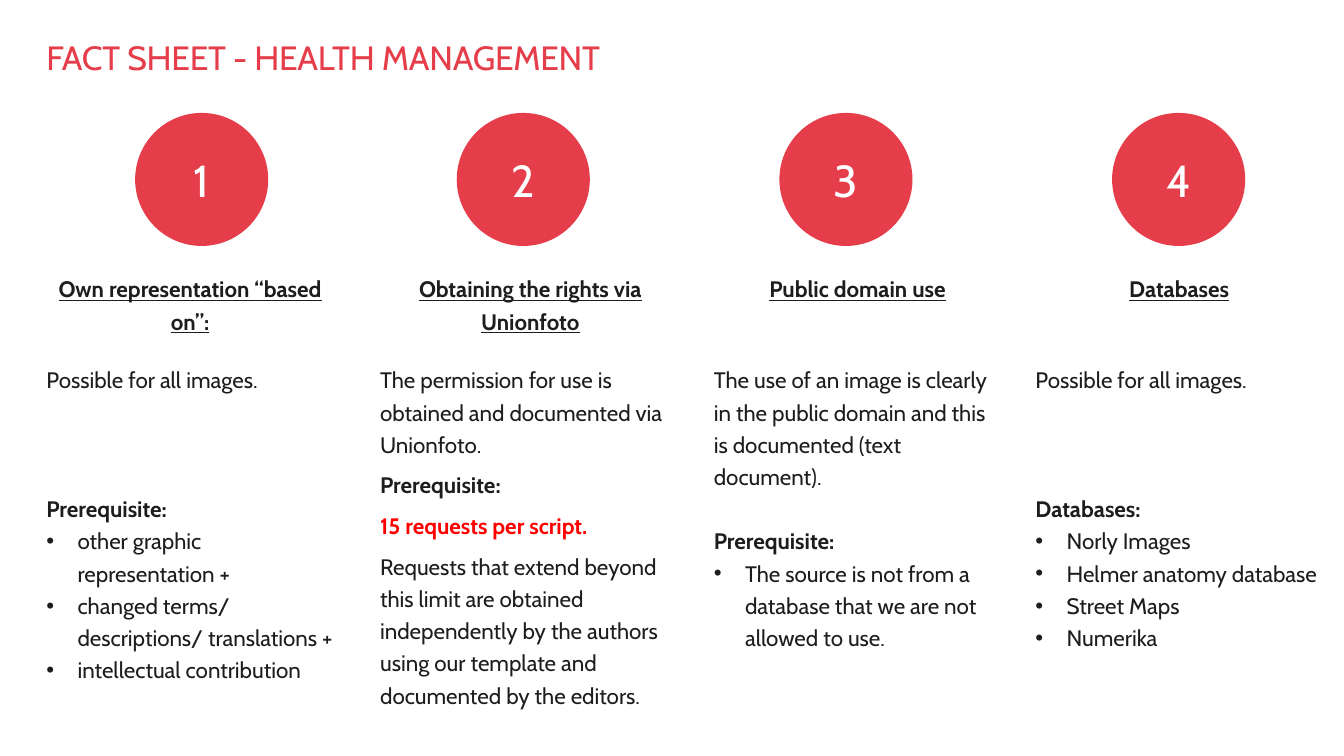
from lxml import etree
from pptx import Presentation
from pptx.dml.color import RGBColor
from pptx.enum.shapes import MSO_SHAPE
from pptx.enum.text import MSO_ANCHOR, PP_ALIGN
from pptx.oxml.ns import qn
from pptx.util import Inches, Pt

CORAL = RGBColor(0xE6, 0x3D, 0x4B)
INK = RGBColor(0x1D, 0x1D, 0x1F)
RED = RGBColor(0xFF, 0x00, 0x00)
WHITE = RGBColor(0xFF, 0xFF, 0xFF)
OVAL = MSO_SHAPE.OVAL
MIDDLE, TOP = MSO_ANCHOR.MIDDLE, MSO_ANCHOR.TOP
LEFT, CENTER = PP_ALIGN.LEFT, PP_ALIGN.CENTER

CIRCLE_SIZE = 1.32
BULLET_INDENT = Inches(0.31)

HEADING = {"bold": True, "underline": True, "align": CENTER}
BULLET = {"bullet": True}


def label(gap):
    return {"bold": True, "before": gap}


# circle left, text left, text width, text height, paragraphs
COLUMNS = [
    (1.34, 0.46, 2.85, 4.5, [
        ("Own representation “based on”:", HEADING),
        ("Possible for all images.", {"before": 19}),
        ("Prerequisite:", label(69)),
        ("other graphic representation +", BULLET),
        ("changed terms/ descriptions/ translations +", BULLET),
        ("intellectual contribution", BULLET),
    ]),
    (4.53, 3.77, 2.98, 4.75, [
        ("Obtaining the rights via Unionfoto", HEADING),
        ("The permission for use is obtained and documented via Unionfoto.",
         {"before": 19}),
        ("Prerequisite:", label(6)),
        ("15 requests per script.",
         {"bold": True, "color": RED, "before": 6, "after": 6}),
        ("Requests that extend beyond this limit are obtained independently "
         "by the authors using our template and documented by the editors.", {}),
    ]),
    (7.73, 7.08, 2.85, 4.18, [
        ("Public domain use", HEADING),
        ("The use of an image is clearly in the public domain and this is "
         "documented (text document).", {"before": 42}),
        ("Prerequisite:", label(23)),
        ("The source is not from a database that we are not allowed to use.",
         BULLET),
    ]),
    (11.03, 10.27, 2.85, 3.86, [
        ("Databases", HEADING),
        ("Possible for all images.", {"before": 42}),
        ("Databases:", label(69)),
        ("Norly Images", BULLET),
        ("Helmer anatomy database", BULLET),
        ("Street Maps", BULLET),
        ("Numerika", BULLET),
    ]),
]


def write(shape, paragraphs, size=16, color=INK, align=LEFT, anchor=TOP,
          spacing=1.2, tracking=None):
    """Fill a shape with (text, format) pairs; each format overrides the defaults."""
    frame = shape.text_frame
    frame.word_wrap = True
    frame.vertical_anchor = anchor
    frame.margin_left = frame.margin_right = 0
    frame.margin_top = frame.margin_bottom = 0
    for index, (text, style) in enumerate(paragraphs):
        paragraph = frame.add_paragraph() if index else frame.paragraphs[0]
        paragraph.alignment = style.get("align", align)
        paragraph.line_spacing = spacing
        paragraph.space_before = Pt(style.get("before", 0))
        paragraph.space_after = Pt(style.get("after", 0))
        run = paragraph.add_run()
        run.text = text
        font = run.font
        font.name = "Cabin"
        font.size = Pt(size)
        font.bold = style.get("bold", False)
        font.underline = style.get("underline", False)
        font.color.rgb = style.get("color", color)
        if tracking is not None:
            run._r.get_or_add_rPr().set("spc", str(round(tracking * 100)))
        if style.get("bullet"):
            properties = paragraph._p.get_or_add_pPr()
            properties.set("marL", str(BULLET_INDENT))
            properties.set("indent", str(-BULLET_INDENT))
            etree.SubElement(properties, qn("a:buFont"), typeface="Arial")
            etree.SubElement(properties, qn("a:buChar"), char="•")


presentation = Presentation()
presentation.slide_width = Inches(13.33)
presentation.slide_height = Inches(7.5)
slide = presentation.slides.add_slide(presentation.slide_layouts[6])

title = slide.shapes.add_textbox(Inches(0.46), Inches(0.38), Inches(12.41), Inches(0.42))
write(title, [("FACT SHEET - HEALTH MANAGEMENT", {})], size=24, color=CORAL,
      anchor=MIDDLE, spacing=0.9, tracking=-0.2)

for number, (circle_left, text_left, width, height, paragraphs) in enumerate(COLUMNS, 1):
    circle = slide.shapes.add_shape(OVAL, Inches(circle_left), Inches(1.12),
                                    Inches(CIRCLE_SIZE), Inches(CIRCLE_SIZE))
    circle.shadow.inherit = False
    circle.fill.solid()
    circle.fill.fore_color.rgb = CORAL
    circle.line.fill.background()
    write(circle, [(str(number), {})], size=32, color=WHITE, align=CENTER,
          anchor=MIDDLE, spacing=1.0)

    column = slide.shapes.add_textbox(Inches(text_left), Inches(2.68),
                                      Inches(width), Inches(height))
    write(column, paragraphs)

presentation.save("out.pptx")
